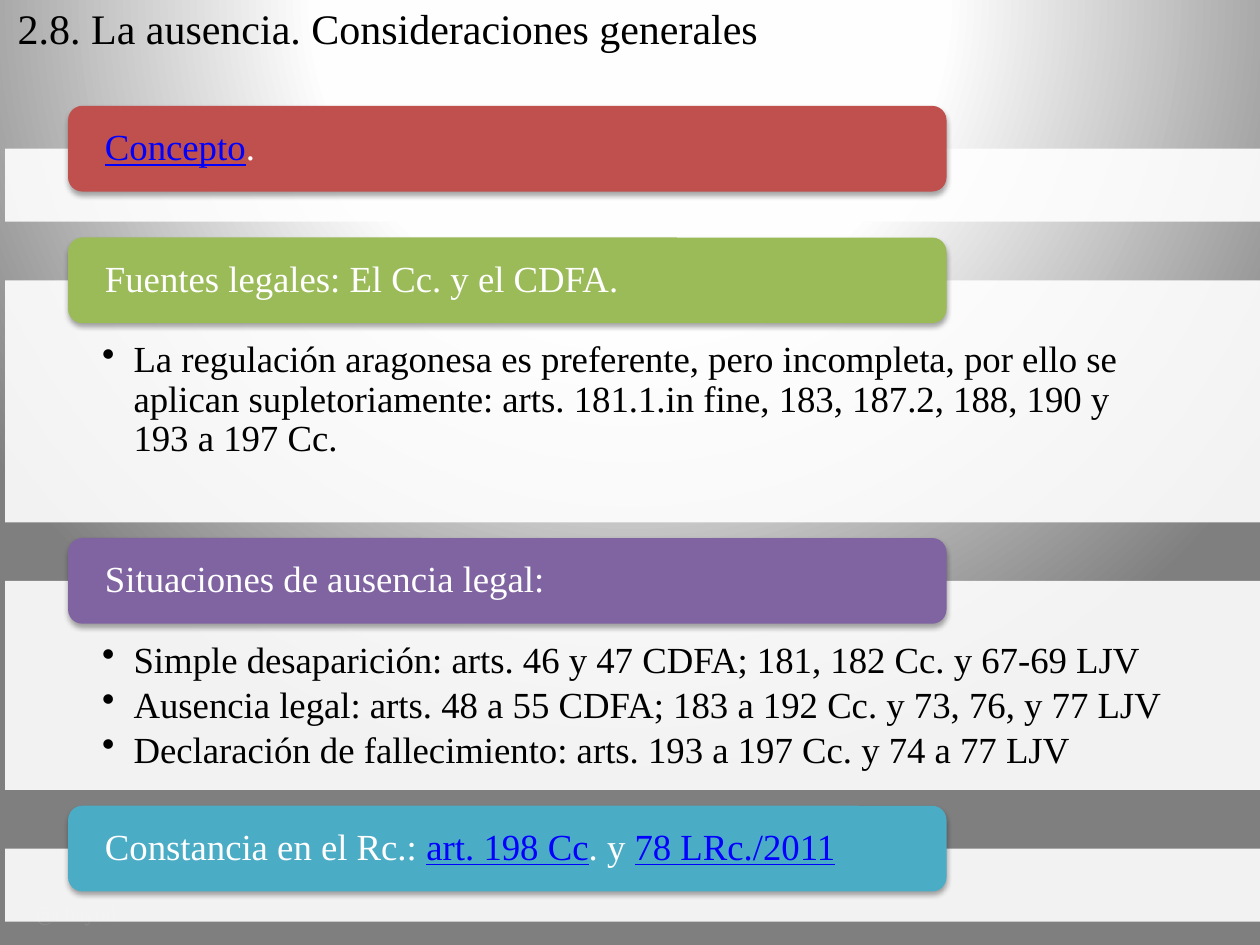
from collections import namedtuple

from lxml import etree
from pptx import Presentation
from pptx import util as u
from pptx.dml.color import RGBColor
from pptx.enum import shapes, text
from pptx.oxml import parse_xml
from pptx.oxml.ns import nsdecls, qn

Box = namedtuple("Box", "left top width height")
WIDTH, HEIGHT = u.Inches(10), u.Inches(7.5)
COLUMNS, ROWS = 100, 75
FONT = "Times New Roman"
BODY_SIZE = 21
COLORS = {
    "text": "000000", "light": "FFFFFF", "link": "0000FF", "footer": "8C8C8C",
    "red": "C0504D", "green": "9BBB59", "purple": "8064A2", "teal": "4BACC6",
    "glow": "FEFEFE", "edge": "7F7F7F",
}
SECTIONS = [
    ("red", 5.8, [("Concepto", True), (".", False)], []),
    ("green", 19.2, [("Fuentes legales: El Cc. y el CDFA.", False)], [
        "La regulación aragonesa es preferente, pero incompleta, por ello se "
        "aplican supletoriamente: arts. 181.1.in fine, 183, 187.2, 188, 190 y "
        "193 a 197 Cc.",
    ]),
    ("purple", 16.6, [("Situaciones de ausencia legal:", False)], [
        "Simple desaparición: arts. 46 y 47 CDFA; 181, 182 Cc. y 67-69 LJV",
        "Ausencia legal: arts. 48 a 55 CDFA; 183 a 192 Cc. y 73, 76, y 77 LJV",
        "Declaración de fallecimiento: arts. 193 a 197 Cc. y 74 a 77 LJV",
    ]),
    ("teal", 5.8, [("Constancia en el Rc.: ", False), ("art. 198 Cc", True),
                   (". y ", False), ("78 LRc./2011", True)], []),
]
FIRST_TOP, SECTION_GAP = 11.8, 4.65


def col(count):
    return int(WIDTH * count / COLUMNS)


def row(count):
    return int(HEIGHT * count / ROWS)


def place(box):
    return col(box.left), row(box.top), col(box.width), row(box.height)


def rgb(name):
    return RGBColor.from_string(COLORS[name])


def style(span, size, color):
    span.font.name = FONT
    span.font.size = u.Pt(size)
    span.font.color.rgb = rgb(color)


def set_frame(frame, anchor, side=1, top=0.5, bottom=0.5):
    frame.word_wrap = True
    frame.vertical_anchor = anchor
    frame.margin_left = frame.margin_right = col(side)
    frame.margin_top, frame.margin_bottom = row(top), row(bottom)


def set_spacing(para, after):
    para.alignment = text.PP_ALIGN.LEFT
    para.line_spacing = 0.9
    para.space_after = u.Pt(BODY_SIZE * after)


def add_block(page, kind, box, color):
    block = page.shapes.add_shape(kind, *place(box))
    block.shadow.inherit = False
    block.fill.solid()
    block.fill.fore_color.rgb = rgb(color)
    block.line.fill.background()
    return block


def add_shadow(block):
    effects = block._element.spPr.find(qn("a:effectLst"))
    effects.append(parse_xml(
        f'<a:outerShdw {nsdecls("a")} blurRad="{u.Pt(3.1)}" dist="{u.Pt(1.8)}" '
        f'dir="5400000" rotWithShape="0"><a:srgbClr val="{COLORS["text"]}">'
        '<a:alpha val="35000"/></a:srgbClr></a:outerShdw>'))


def add_bullet(para):
    properties = para._p.get_or_add_pPr()
    properties.set("marL", str(col(2.5)))
    properties.set("indent", str(-col(2.5)))
    etree.SubElement(properties, qn("a:buChar")).set("char", "•")


def paint_background(page):
    fill = page.background.fill
    fill.solid()
    stops = "".join(
        f'<a:gs pos="{position * 1000}"><a:srgbClr val="{COLORS[name]}"/></a:gs>'
        for position, name in [(0, "light"), (40, "glow"), (100, "edge")])
    gradient = parse_xml(
        f'<a:gradFill {nsdecls("a")} rotWithShape="1"><a:gsLst>{stops}</a:gsLst>'
        '<a:path path="circle"><a:fillToRect l="50000" t="-80000" r="50000" '
        'b="180000"/></a:path></a:gradFill>')
    solid = next(page._element.iter(qn("a:solidFill")))
    solid.getparent().replace(solid, gradient)


def add_title(page, box):
    title = page.shapes.title
    title.left, title.top, title.width, title.height = place(box)
    frame = title.text_frame
    frame.text = "2.8. La ausencia. Consideraciones generales"
    set_frame(frame, text.MSO_ANCHOR.TOP)
    frame.paragraphs[0].alignment = text.PP_ALIGN.LEFT
    style(frame.paragraphs[0].runs[0], 24, "text")


def add_footer(page, box):
    frame = page.shapes.add_textbox(*place(box)).text_frame
    frame.text = "@cbayod"
    set_frame(frame, text.MSO_ANCHOR.MIDDLE)
    frame.paragraphs[0].alignment = text.PP_ALIGN.CENTER
    style(frame.paragraphs[0].runs[0], 12, "footer")


def add_panel(page, box, items):
    panel = add_block(page, shapes.MSO_SHAPE.RECTANGLE, box, "light")
    color = next(panel._element.spPr.iter(qn("a:srgbClr")))
    etree.SubElement(color, qn("a:alpha")).set("val", "90000")
    if not items:
        return
    frame = panel.text_frame
    set_frame(frame, text.MSO_ANCHOR.TOP, 7.7, 4.8, 1.6)
    frame.text = "\n".join(items)
    for para in frame.paragraphs:
        set_spacing(para, 0.15)
        add_bullet(para)
        style(para.runs[0], BODY_SIZE, "text")


def add_heading(page, box, color, parts):
    heading = add_block(page, shapes.MSO_SHAPE.ROUNDED_RECTANGLE, box, color)
    add_shadow(heading)
    set_frame(heading.text_frame, text.MSO_ANCHOR.MIDDLE, 2.6, 0, 0)
    para = heading.text_frame.paragraphs[0]
    set_spacing(para, 0.35)
    for words, linked in parts:
        span = para.add_run()
        span.text = words
        style(span, BODY_SIZE, "link" if linked else "light")
        span.font.underline = linked


def add_section(page, box, color, parts, items):
    add_panel(page, box, items)
    add_heading(page, Box(box.left + 5, box.top - 3.4, box.width * 0.7, 6.8),
                color, parts)


def main():
    deck = Presentation()
    deck.slide_width, deck.slide_height = WIDTH, HEIGHT
    page = deck.slides.add_slide(deck.slide_layouts[5])
    paint_background(page)
    add_footer(page, Box(0.4, 70.5, 11.3, 4))
    add_title(page, Box(0.4, -0.3, 98, 5))
    top = FIRST_TOP
    for color, height, parts, items in SECTIONS:
        add_section(page, Box(0.4, top, 99.6, height), color, parts, items)
        top += height + SECTION_GAP
    deck.save("out.pptx")


if __name__ == "__main__":
    main()
